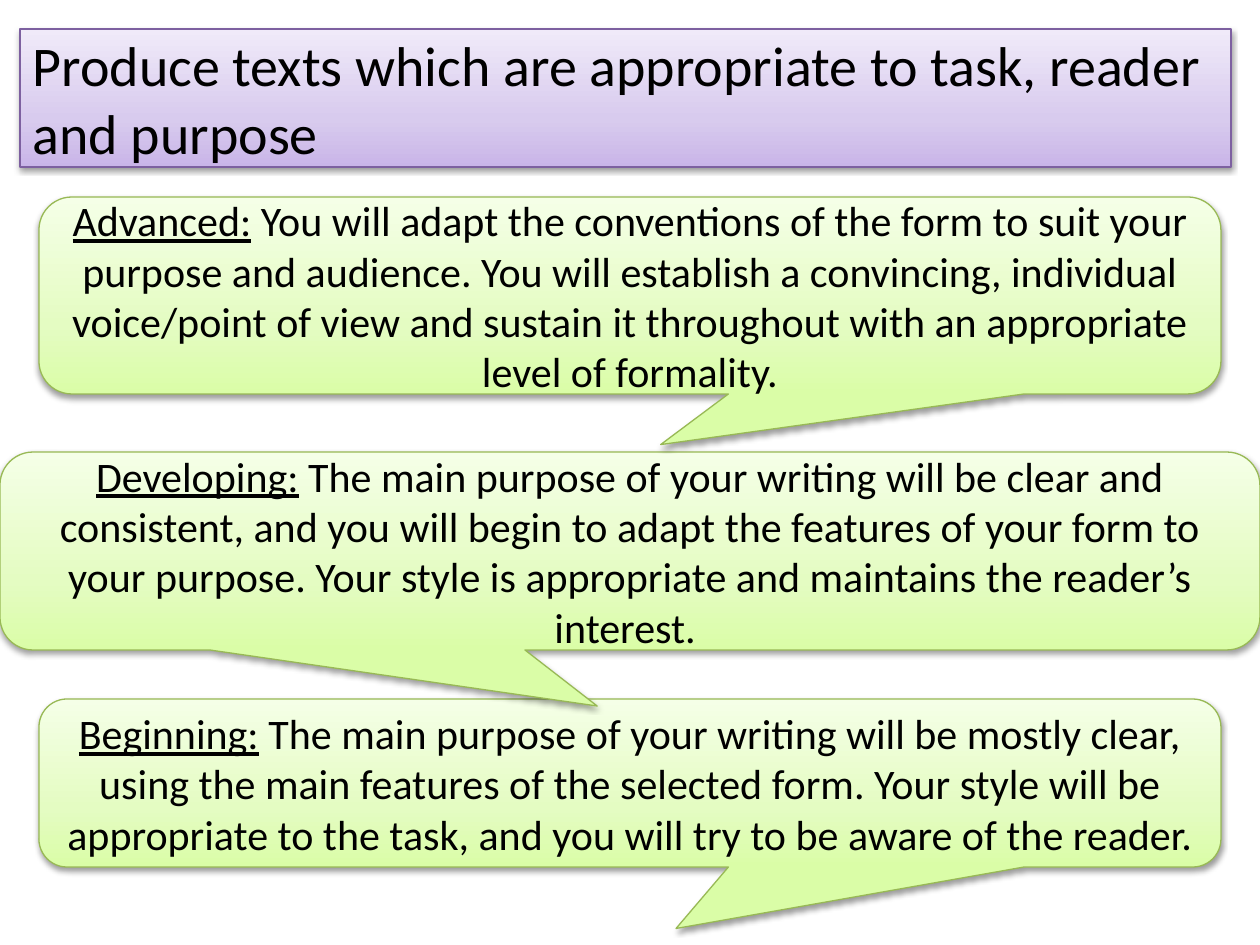
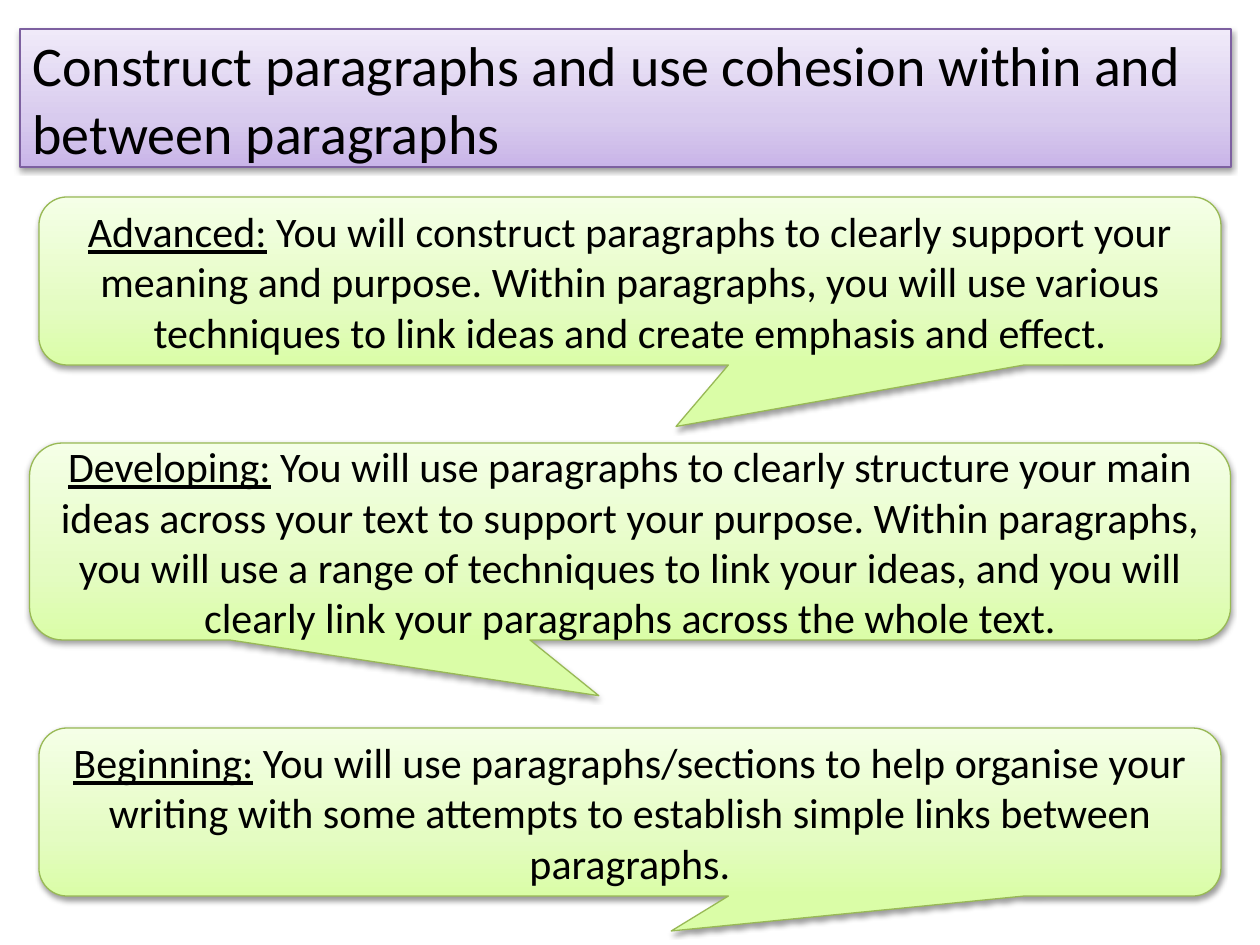
import copy
import pptx
import pptx.dml.color
import pptx.enum.shapes
import pptx.enum.text
import pptx.oxml
import pptx.oxml.ns
import pptx.util

RGBColor = pptx.dml.color.RGBColor
ALIGN = pptx.enum.text.PP_ALIGN
qn = pptx.oxml.ns.qn

SLIDES = [
    ("Produce texts which are appropriate to task, reader and purpose", [
        ("Advanced:", " You will adapt the conventions of the form to suit your purpose and audience. "
         "You will establish a convincing, individual voice/point of view and sustain it throughout "
         "with an appropriate level of formality.", (197, 1182, 197), (0.026, 0.757)),
        ("Developing:", " The main purpose of your writing will be clear and consistent, and you will "
         "begin to adapt the features of your form to your purpose. Your style is appropriate and "
         "maintains the reader’s interest. ", (452, 1260, 198), (-0.026, 0.783)),
        ("Beginning:", " The main purpose of your writing will be mostly clear, using the main features "
         "of the selected form. Your style will be appropriate to the task, and you will try to be "
         "aware of the reader.", (699, 1182, 168), (0.039, 0.866)),
    ]),
    ("Construct paragraphs and use cohesion within and between paragraphs", [
        ("Advanced:", " You will construct paragraphs to clearly support your meaning and purpose. "
         "Within paragraphs, you will use various techniques to link ideas and create emphasis and "
         "effect.", (197, 1182, 168), (0.039, 0.866)),
        ("Developing:", " You will use paragraphs to clearly structure your main ideas across your text "
         "to support your purpose. Within paragraphs, you will use a range of techniques to link your "
         "ideas, and you will clearly link your paragraphs across the whole text.",
         (443, 1201, 197), (-0.026, 0.783)),
        ("Beginning:", " You will use paragraphs/sections to help organise your writing with some "
         "attempts to establish simple links between paragraphs.", (728, 1182, 168), (0.035, 0.708)),
    ]),
]

SLIDE_W, SLIDE_H = 1260, 945
TITLE_BOX = (20, 29, 1211, 138)
CORNER = 0.167
STOPS = (0, 0.35, 1)
BLACK = RGBColor(0, 0, 0)
PURPLE = {"line": RGBColor(0x7D, 0x60, 0xA0),
          "fill": (RGBColor(0xC9, 0xB5, 0xE8), RGBColor(0xD8, 0xCB, 0xEE), RGBColor(0xF0, 0xEA, 0xF9))}
GREEN = {"line": RGBColor(0x98, 0xB9, 0x55),
         "fill": (RGBColor(0xDA, 0xFD, 0xA7), RGBColor(0xE4, 0xFC, 0xC2), RGBColor(0xF5, 0xFF, 0xE7))}
FRAME = {"word_wrap": True, "auto_size": pptx.enum.text.MSO_AUTO_SIZE.NONE,
         "vertical_anchor": pptx.enum.text.MSO_ANCHOR.MIDDLE}
TITLE_FONT = {"name": "Calibri", "size": pptx.util.Pt(32)}
BODY_FONT = {"name": "Calibri", "size": pptx.util.Pt(24)}
ROUND_RECT = ('<a:prstGeom %s prst="roundRect"><a:avLst/></a:prstGeom>' % pptx.oxml.ns.nsdecls("a"))
SHADOW = ('<a:outerShdw %s blurRad="40000" dist="20000" dir="5400000" rotWithShape="0">'
          '<a:srgbClr val="000000"><a:alpha val="38000"/></a:srgbClr></a:outerShdw>'
          % pptx.oxml.ns.nsdecls("a"))


def px(n):
    return round(n * 914400 / 126)


def set_all(obj, values):
    for key, value in values.items():
        setattr(obj, key, value)


def style(sp, look):
    sp.fill.gradient()
    sp.fill.gradient_angle = 90
    stops = sp._element.spPr.find(".//" + qn("a:gsLst"))
    stops.append(copy.deepcopy(stops[0]))
    for stop, position, color in zip(sp.fill.gradient_stops, STOPS, look["fill"]):
        stop.position = position
        stop.color.rgb = color
    sp.line.color.rgb = look["line"]
    sp.line.width = pptx.util.Pt(0.75)
    sp.shadow.inherit = False
    sp._element.spPr.find(qn("a:effectLst")).append(pptx.oxml.parse_xml(SHADOW))
    set_all(sp.text_frame, FRAME)


def write(sp, runs, align, font):
    p = sp.text_frame.paragraphs[0]
    p.alignment = align
    for text, underline in runs:
        r = p.add_run()
        r.text = text
        set_all(r.font, font)
        r.font.color.rgb = BLACK
        if underline:
            r.font.underline = True


def add_title(slide, text):
    sp = slide.shapes.title
    set_all(sp, dict(zip(("left", "top", "width", "height"), map(px, TITLE_BOX))))
    sp._element.spPr.append(pptx.oxml.parse_xml(ROUND_RECT))
    style(sp, PURPLE)
    write(sp, [(text, False)], ALIGN.LEFT, TITLE_FONT)


def add_level(slide, level, text, box, tail):
    top, width, height = box
    sp = slide.shapes.add_shape(
        pptx.enum.shapes.MSO_SHAPE.ROUNDED_RECTANGULAR_CALLOUT,
        px((SLIDE_W - width) / 2), px(top), px(width), px(height))
    for i, value in enumerate((*tail, CORNER)):
        sp.adjustments[i] = value
    style(sp, GREEN)
    write(sp, [(level, True), (text, False)], ALIGN.CENTER, BODY_FONT)


def main():
    prs = pptx.Presentation()
    prs.slide_width, prs.slide_height = px(SLIDE_W), px(SLIDE_H)
    for title, levels in SLIDES:
        slide = prs.slides.add_slide(prs.slide_layouts[5])
        add_title(slide, title)
        for level in reversed(levels):
            add_level(slide, *level)
    prs.save("out.pptx")


if __name__ == "__main__":
    main()
